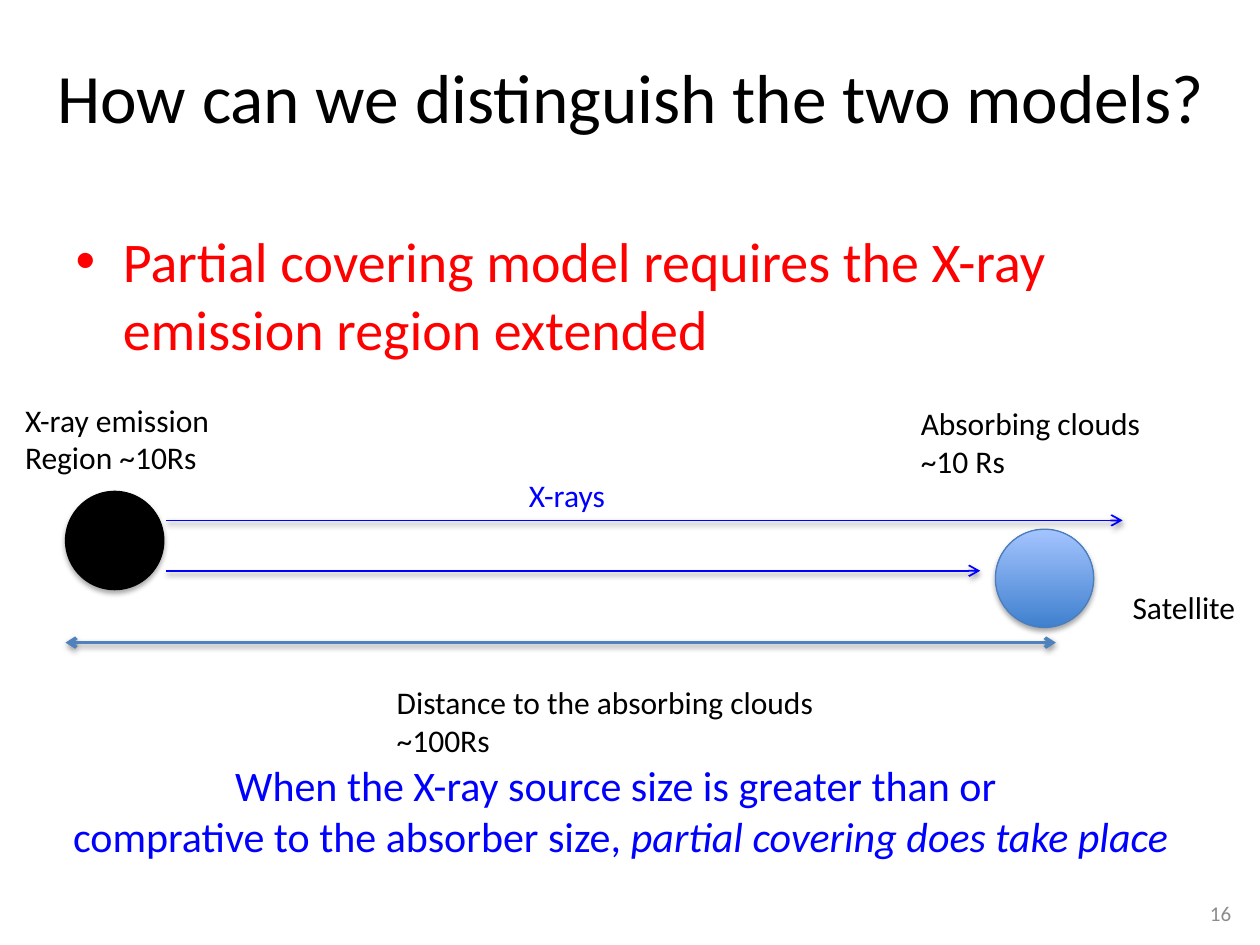
from lxml import etree
from pptx import Presentation
from pptx.dml.color import RGBColor
from pptx.enum.shapes import MSO_CONNECTOR, MSO_SHAPE
from pptx.enum.text import MSO_ANCHOR, MSO_AUTO_SIZE, PP_ALIGN
from pptx.oxml.ns import qn
from pptx.util import Inches, Pt

STRAIGHT = MSO_CONNECTOR.STRAIGHT
OVAL = MSO_SHAPE.OVAL
TOP, MIDDLE = MSO_ANCHOR.TOP, MSO_ANCHOR.MIDDLE
FIXED = MSO_AUTO_SIZE.NONE
LEFT, CENTER, RIGHT = PP_ALIGN.LEFT, PP_ALIGN.CENTER, PP_ALIGN.RIGHT

BLACK = RGBColor(0x00, 0x00, 0x00)
RED = RGBColor(0xFF, 0x00, 0x00)
BLUE = RGBColor(0x00, 0x00, 0xFF)
GRAY = RGBColor(0x8C, 0x8C, 0x8C)
STEEL = RGBColor(0x4F, 0x81, 0xBD)
CLOUD_EDGE = RGBColor(0x4B, 0x7E, 0xBC)
CLOUD_DARK = RGBColor(0x3F, 0x80, 0xCE)
CLOUD_LIGHT = RGBColor(0xA4, 0xC4, 0xFF)
FONT = "Calibri"
BALL = 0.78


def place(shape, left, top, width, height):
    shape.left, shape.top = Inches(left), Inches(top)
    shape.width, shape.height = Inches(width), Inches(height)


def format_text(frame, size, color, align=LEFT):
    for para in frame.paragraphs:
        para.alignment = align
        for span in para.runs:
            span.font.name = FONT
            span.font.size = Pt(size)
            span.font.color.rgb = color


def add_label(page, box, text, size=18, color=BLACK, align=LEFT):
    label = page.shapes.add_textbox(*map(Inches, box))
    label.text_frame.word_wrap = False
    label.text_frame.text = text
    format_text(label.text_frame, size, color, align)
    return label


def add_shadow(shape, opacity, distance):
    effects = etree.SubElement(shape._element.spPr, qn("a:effectLst"))
    shadow = etree.SubElement(effects, qn("a:outerShdw"), blurRad=str(Pt(3.1)),
                              dist=str(Pt(distance)), dir="5400000", rotWithShape="0")
    color = etree.SubElement(shadow, qn("a:srgbClr"), val="000000")
    etree.SubElement(color, qn("a:alpha"), val=str(opacity * 1000))


def add_ball(page, left, top, edge):
    ball = page.shapes.add_shape(OVAL, *map(Inches, (left, top, BALL, BALL)))
    ball.line.color.rgb = edge
    ball.line.width = Pt(0.75)
    add_shadow(ball, 35, 1.8)
    return ball


def add_arrow(page, start, end, y, color, width, ends=("tailEnd",)):
    arrow = page.shapes.add_connector(STRAIGHT, Inches(start), Inches(y), Inches(end), Inches(y))
    arrow.line.color.rgb = color
    arrow.line.width = Pt(width)
    for end_name in ends:
        etree.SubElement(arrow.line._get_or_add_ln(), qn("a:" + end_name), type="arrow")
    add_shadow(arrow, 38, 1.6)


def add_heading(page, box):
    title = page.shapes.title
    place(title, *box)
    frame = title.text_frame
    frame.text = "How can we distinguish the two models?"
    frame.auto_size = FIXED
    frame.vertical_anchor = TOP
    frame.margin_top = 0
    format_text(frame, 39.6, BLACK, CENTER)


def add_claim(page, box):
    body = page.placeholders[1]
    place(body, *box)
    frame = body.text_frame
    frame.text = "Partial covering model requires the X-ray emission region extended"
    frame.auto_size = FIXED
    frame.paragraphs[0].space_before = Pt(0)
    format_text(frame, 32, RED)


def add_diagram(page, left, top):
    cloud = add_ball(page, left + 7.8, top + 1.07, CLOUD_EDGE)
    cloud.fill.gradient()
    cloud.fill.gradient_angle = 90
    for stop, color in zip(cloud.fill.gradient_stops, (CLOUD_DARK, CLOUD_LIGHT)):
        stop.color.rgb = color

    source = add_ball(page, left + 0.42, top + 0.77, BLACK)
    source.fill.solid()
    source.fill.fore_color.rgb = BLACK

    add_arrow(page, left + 0.42, left + 8.28, top + 1.97, STEEL, 2, ("headEnd", "tailEnd"))
    for end, y in ((8.81, 1.0), (7.68, 1.4)):
        add_arrow(page, left + 1.22, left + end, top + y, BLUE, 1)

    labels = (
        (0, 0, 1.72, 0.71, "X-ray emission\nRegion ~10Rs", BLACK),
        (7.11, 0.03, 1.96, 0.71, "Absorbing clouds\n~10 Rs", BLACK),
        (4, 0.6, 0.83, 0.4, "X-rays", BLUE),
        (8.79, 1.49, 1.03, 0.4, "Satellite", BLACK),
        (2.95, 2.24, 3.55, 0.71, "Distance to the absorbing clouds\n~100Rs", BLACK),
    )
    for x, y, width, height, text, color in labels:
        add_label(page, (left + x, top + y, width, height), text, color=color)


def add_conclusion(page, box):
    label = add_label(page, box, "When the X-ray source size is greater than or \n"
                      "comprative to the absorber size, ", 24, BLUE, CENTER)
    span = label.text_frame.paragraphs[1].add_run()
    span.text = "partial covering does take place"
    format_text(label.text_frame, 24, BLUE, CENTER)
    span.font.italic = True


def add_page_number(page, box):
    number = add_label(page, box, "16", 12, GRAY, RIGHT)
    number.text_frame.word_wrap = True
    number.text_frame.vertical_anchor = MIDDLE


def main():
    deck = Presentation()
    deck.slide_width, deck.slide_height = Inches(10), Inches(7.5)
    page = deck.slides.add_slide(deck.slide_layouts[1])
    add_heading(page, (0.15, 0.43, 9.72, 1.25))
    add_claim(page, (0.5, 1.75, 9, 1.18))
    add_diagram(page, 0.1, 3.13)
    add_conclusion(page, (0.35, 5.98, 9.15, 0.91))
    add_page_number(page, (7.54, 7.05, 2.33, 0.4))
    deck.save("out.pptx")


if __name__ == "__main__":
    main()
